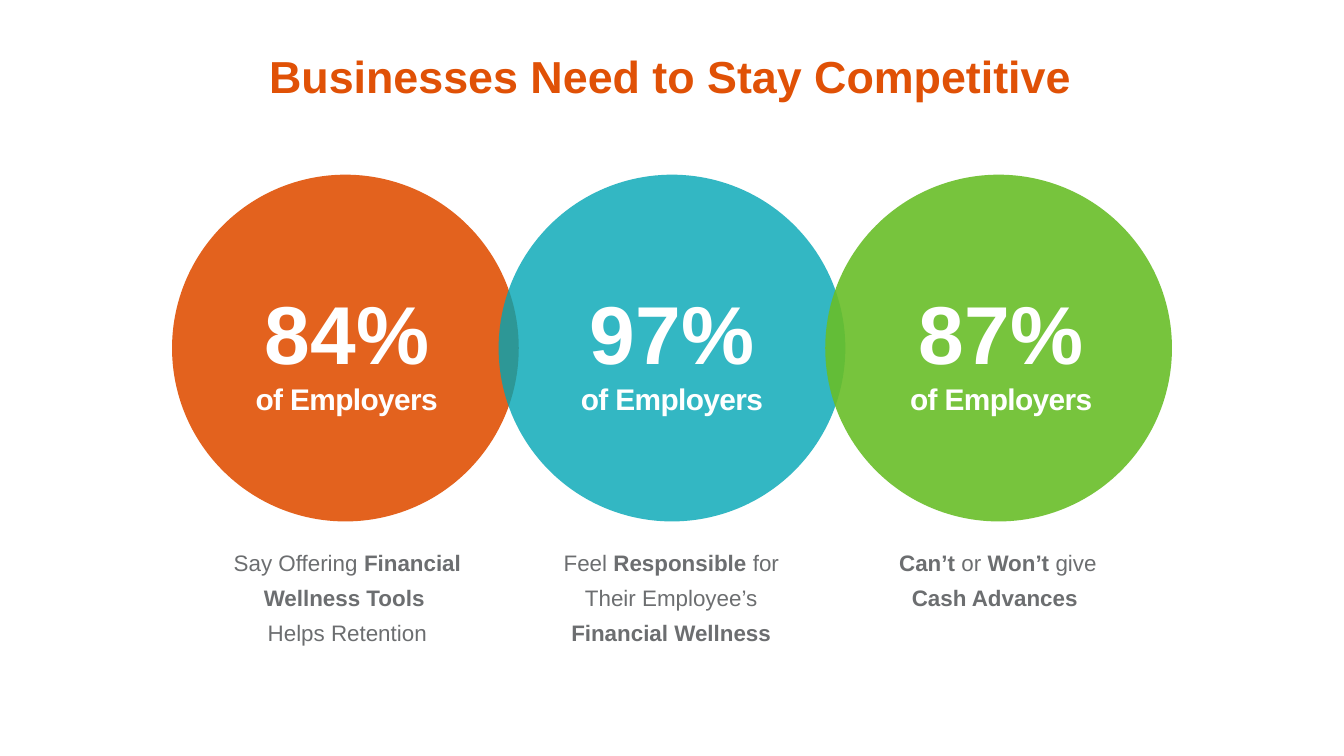
from dataclasses import dataclass

from lxml.etree import SubElement
from pptx import Presentation
from pptx.dml.color import RGBColor
from pptx.enum.shapes import MSO_SHAPE
from pptx.enum.text import MSO_ANCHOR, MSO_AUTO_SIZE, PP_ALIGN
from pptx.oxml.ns import qn
from pptx.util import Inches, Pt


@dataclass(frozen=True)
class Theme:
    font: str = "Arial"
    orange: RGBColor = RGBColor(0xE0, 0x51, 0x06)
    teal: RGBColor = RGBColor(0x00, 0xA5, 0xB5)
    green: RGBColor = RGBColor(0x69, 0xBE, 0x28)
    gray: RGBColor = RGBColor(0x6C, 0x6E, 0x70)
    white: RGBColor = RGBColor(0xFF, 0xFF, 0xFF)
    title_size: int = 24
    percent_size: int = 44
    label_size: int = 16
    caption_size: int = 12


THEME = Theme()
DIAMETER = 2.58
COLUMN_PITCH = 2.43
FIRST_LEFT = 1.28
CIRCLE_TOP = 1.3


@dataclass(frozen=True)
class Column:
    percent: str
    color: RGBColor
    opacity: int
    statistic_left: float  # from the circle's left edge
    caption_left: float
    caption_width: float
    caption_height: float
    caption: list  # paragraphs of (text, bold) runs; "\n" is a line break


COLUMNS = [
    Column("84%", THEME.orange, 90, 0.47, 0.14, 2.33, 0.86,
           [[("Say Offering ", False), ("Financial Wellness Tools ", True),
             ("\n", False), ("Helps Retention", False)]]),
    Column("97%", THEME.teal, 80, 0.46, 0.3, 1.97, 0.86,
           [[("Feel ", False), ("Responsible", True),
             (" for Their Employee’s ", False),
             ("Financial Wellness", True)]]),
    Column("87%", THEME.green, 90, 0.48, 0.3, 1.97, 0.6,
           [[("Can’t", True), (" or ", False), ("Won’t", True),
             (" give", False)],
            [("Cash Advances ", True)]]),
]


def format_paragraph(paragraph, size, color, bold=None):
    paragraph.alignment = PP_ALIGN.CENTER
    font = paragraph.font
    font.name, font.size, font.bold = THEME.font, Pt(size), bold
    font.color.rgb = color


def set_frame(frame, anchor, side, vertical):
    """Wrap the text and set its anchor and its margins in inches."""
    frame.word_wrap = True
    frame.auto_size = MSO_AUTO_SIZE.NONE
    frame.vertical_anchor = anchor
    frame.margin_left = frame.margin_right = Inches(side)
    frame.margin_top = frame.margin_bottom = Inches(vertical)


def add_frame(slide, left, top, width, height):
    box = slide.shapes.add_textbox(
        Inches(left), Inches(top), Inches(width), Inches(height))
    return box.text_frame


def place_title(slide, text, left, top, width, height):
    title = slide.shapes.title
    title.left, title.top = Inches(left), Inches(top)
    title.width, title.height = Inches(width), Inches(height)
    set_frame(title.text_frame, MSO_ANCHOR.TOP, 0.1, 0.05)
    title.text_frame.text = text
    format_paragraph(title.text_frame.paragraphs[0], THEME.title_size,
                     THEME.orange, True)


def add_circle(slide, left, top, diameter, color, opacity):
    circle = slide.shapes.add_shape(
        MSO_SHAPE.OVAL, Inches(left), Inches(top),
        Inches(diameter), Inches(diameter))
    circle.shadow.inherit = False
    circle.line.fill.background()
    circle.fill.solid()
    circle.fill.fore_color.rgb = color
    color_element = circle.fill._xPr.find(qn("a:solidFill"))[0]
    SubElement(color_element, qn("a:alpha"), val=str(opacity * 1000))


def add_statistic(slide, percent, left, top, width, height):
    frame = add_frame(slide, left, top, width, height)
    set_frame(frame, MSO_ANCHOR.BOTTOM, 0.04, 0.02)
    lines = [(percent, THEME.percent_size, 20),
             ("of Employers", THEME.label_size, -30)]
    for index, (text, size, spacing) in enumerate(lines):
        paragraph = frame.add_paragraph() if index else frame.paragraphs[0]
        run = paragraph.add_run()
        run.text = text
        run.font._element.set("spc", str(spacing))
        format_paragraph(paragraph, size, THEME.white, True)


def add_caption(slide, paragraphs, left, top, width, height):
    frame = add_frame(slide, left, top, width, height)
    set_frame(frame, MSO_ANCHOR.TOP, 0.1, 0.05)
    for index, runs in enumerate(paragraphs):
        paragraph = frame.add_paragraph() if index else frame.paragraphs[0]
        paragraph.line_spacing = 1.3
        for text, bold in runs:
            if text == "\n":
                paragraph.add_line_break()
                continue
            run = paragraph.add_run()
            run.text = text
            run.font.bold = bold
        format_paragraph(paragraph, THEME.caption_size, THEME.gray)


def add_column(slide, column, left, top, diameter):
    """Draw a circle with its statistic inside and its caption below."""
    add_circle(slide, left, top, diameter, column.color, column.opacity)
    add_statistic(slide, column.percent, left + column.statistic_left,
                  top + 0.77, 1.66, 1.05)
    add_caption(slide, column.caption, left + column.caption_left,
                top + diameter + 0.1, column.caption_width,
                column.caption_height)


def main():
    presentation = Presentation()
    presentation.slide_width = Inches(10)
    presentation.slide_height = Inches(10) * 9 // 16
    slide = presentation.slides.add_slide(presentation.slide_layouts[5])
    place_title(slide, "Businesses Need to Stay Competitive",
                0.41, 0.31, 9.15, 0.4)
    for index, column in enumerate(COLUMNS):
        add_column(slide, column, FIRST_LEFT + index * COLUMN_PITCH,
                   CIRCLE_TOP, DIAMETER)
    presentation.save("out.pptx")


if __name__ == "__main__":
    main()
